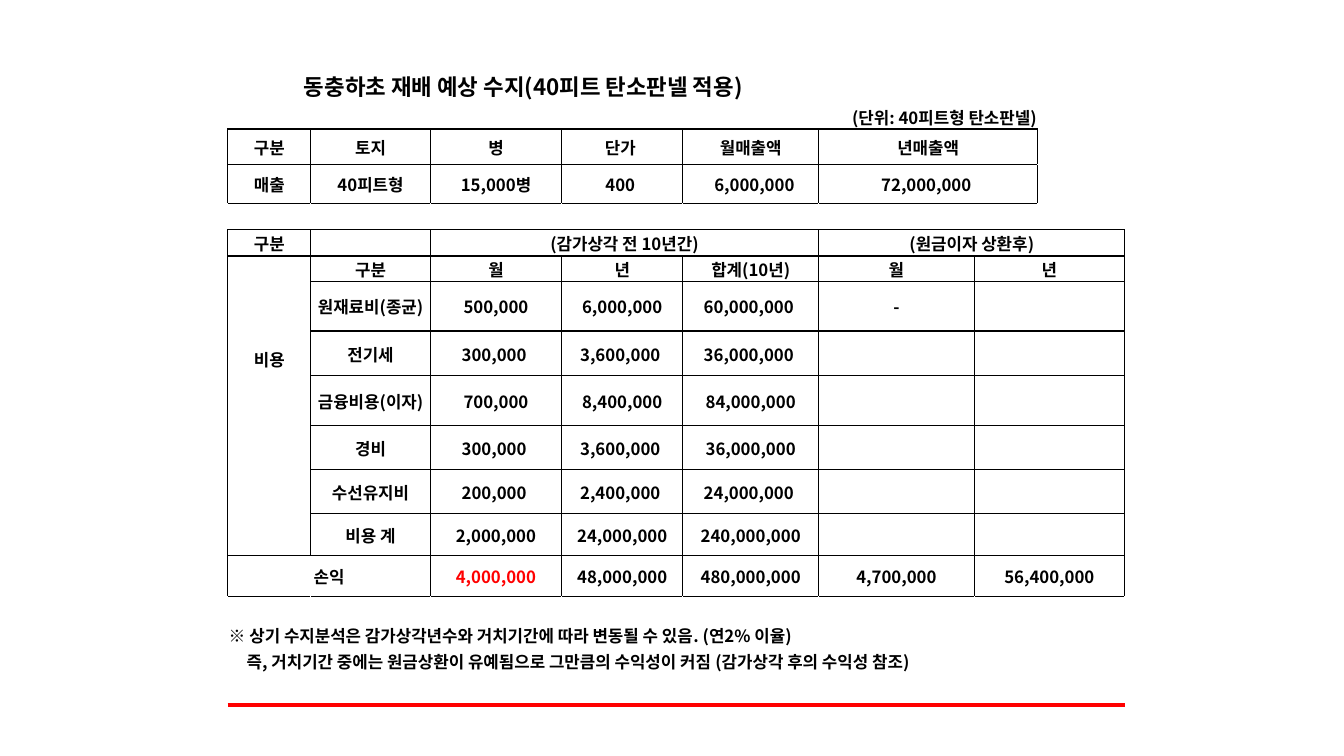
from dataclasses import dataclass

from lxml import etree
from pptx import Presentation
from pptx import util as u
from pptx.dml.color import RGBColor
from pptx.enum import shapes, text
from pptx.oxml.ns import qn
from pptx.table import Table, _Cell

BLACK = RGBColor(0x00, 0x00, 0x00)
WHITE = RGBColor(0xFF, 0xFF, 0xFF)
RED = RGBColor(0xFF, 0x00, 0x00)
FONT = "Noto Sans CJK KR"
BODY_SIZE = 12
LEFT, TOP, RIGHT, RULE_Y = 162.7, 49, 803.5, 503.3
COLUMN_WIDTHS = (59.3, 85.4, 93.9, 86.4, 97.2, 111, 45.4, 62.2)
COLUMN_COUNT = len(COLUMN_WIDTHS)


@dataclass(frozen=True)
class BudgetRow:
    height: float
    texts: tuple[str, ...] = ()
    boxed_columns: int = 0


@dataclass(frozen=True)
class Merge:
    row: int
    column: int
    rows: int
    columns: int


@dataclass(frozen=True)
class CellStyle:
    size: float = BODY_SIZE
    color: RGBColor = BLACK
    align: text.PP_ALIGN = text.PP_ALIGN.CENTER
    anchor: text.MSO_ANCHOR = text.MSO_ANCHOR.MIDDLE
    margin_left: float = 0.7
    margin_bottom: float = 0


ROWS = (
    BudgetRow(23.8, ("동충하초 재배 예상 수지(40피트 탄소판넬 적용)",)),
    BudgetRow(19.4, ("", "", "", "", "(단위: 40피트형 탄소판넬)")),
    BudgetRow(25.2, ("구분", "토지", "병", "단가 ", "월매출액", "년매출액"), 7),
    BudgetRow(28.1, ("매출", "40피트형", "15,000병", "400 ", "6,000,000", "72,000,000 "), 7),
    BudgetRow(18.7),
    BudgetRow(18.7, ("구분", "", "(감가상각 전 10년간)", "", "", "(원금이자 상환후)"), 8),
    BudgetRow(18, ("비용", "구분", "월", "년", "합계(10년)", "월", "년"), 8),
    BudgetRow(31.7, ("", "원재료비(종균)", "500,000", "6,000,000", "60,000,000 ", "-"), 8),
    BudgetRow(31.7, ("", "전기세", "300,000 ", "3,600,000 ", "36,000,000 "), 8),
    BudgetRow(31.7, ("", "금융비용(이자)", "700,000", "8,400,000", "84,000,000"), 8),
    BudgetRow(31.7, ("", "경비", "300,000 ", "3,600,000 ", "36,000,000"), 8),
    BudgetRow(31.7, ("", "수선유지비", "200,000 ", "2,400,000 ", "24,000,000 "), 8),
    BudgetRow(29.5, ("", "비용 계", "2,000,000", "24,000,000", "240,000,000"), 8),
    BudgetRow(29.5, ("손익", "", "4,000,000", "48,000,000", "480,000,000",
                     "4,700,000", "56,400,000"), 8),
    BudgetRow(15.8),
    BudgetRow(18, ("※ 상기 수지분석은 감가상각년수와 거치기간에 따라 변동될 수 있음. (연2% 이율)",)),
    BudgetRow(18.7, ("즉, 거치기간 중에는 원금상환이 유예됨으로 그만큼의 수익성이 커짐 "
                     "(감가상각 후의 수익성 참조)",)),
)

MERGES = (
    Merge(0, 0, 1, 5), Merge(0, 5, 1, 2), Merge(1, 4, 1, 3),
    *(Merge(row, 5, 1, 2) for row in (2, 3, 4)),
    Merge(5, 2, 1, 3), Merge(5, 5, 1, 3), Merge(6, 0, 7, 1), Merge(13, 0, 1, 2),
    *(Merge(row, 6, 1, 2) for row in range(6, 15)),
    *(Merge(row, 0, 1, COLUMN_COUNT) for row in (15, 16)),
)

DEFAULT_STYLE = CellStyle()
STYLES = {
    (0, 0): CellStyle(size=16, anchor=text.MSO_ANCHOR.BOTTOM),
    (1, 4): CellStyle(align=text.PP_ALIGN.RIGHT, anchor=text.MSO_ANCHOR.BOTTOM),
    (3, 4): CellStyle(margin_left=6),
    (6, 0): CellStyle(margin_bottom=67),
    (13, 2): CellStyle(color=RED),
    (15, 0): CellStyle(align=text.PP_ALIGN.LEFT),
    (16, 0): CellStyle(align=text.PP_ALIGN.LEFT, margin_left=13.5),
}


def is_boxed(row: int, column: int) -> bool:
    return 0 <= row < len(ROWS) and 0 <= column < ROWS[row].boxed_columns


def set_borders(cell: _Cell, row: int, column: int) -> None:
    """Draw a side black when the cell on either side of it is boxed."""
    properties = cell._tc.get_or_add_tcPr()
    neighbours = {"lnL": (row, column - 1), "lnR": (row, column + 1),
                  "lnT": (row - 1, column), "lnB": (row + 1, column)}
    for side, neighbour in neighbours.items():
        color = BLACK if is_boxed(row, column) or is_boxed(*neighbour) else WHITE
        line = etree.SubElement(properties, qn(f"a:{side}"), w=str(u.Pt(1)))
        fill = etree.SubElement(line, qn("a:solidFill"))
        etree.SubElement(fill, qn("a:srgbClr"), val=str(color))


def fill_cell(cell: _Cell, content: str, style: CellStyle) -> None:
    cell.fill.background()
    cell.vertical_anchor = style.anchor
    cell.margin_left = u.Pt(style.margin_left)
    cell.margin_right = cell.margin_top = u.Pt(0.7)
    cell.margin_bottom = u.Pt(style.margin_bottom)
    paragraph = cell.text_frame.paragraphs[0]
    paragraph.alignment = style.align
    if content:
        run = paragraph.add_run()
        run.text = content
        run.font.name = FONT
        run.font.size = u.Pt(style.size)
        run.font.bold = True
        run.font.color.rgb = style.color
        etree.SubElement(run._r.get_or_add_rPr(), qn("a:ea"), typeface=FONT)
    else:
        # The end mark keeps an empty cell from growing its row.
        end_mark = etree.SubElement(paragraph._p, qn("a:endParaRPr"), sz=str(BODY_SIZE * 100))
        for script in ("latin", "ea"):
            etree.SubElement(end_mark, qn(f"a:{script}"), typeface=FONT)


def fill_table(table: Table) -> None:
    table.first_row = table.horz_banding = False
    for column, width in zip(table.columns, COLUMN_WIDTHS):
        column.width = u.Pt(width)
    for row_index, row in enumerate(ROWS):
        table.rows[row_index].height = u.Pt(row.height)
        for column_index in range(COLUMN_COUNT):
            cell = table.cell(row_index, column_index)
            content = row.texts[column_index] if column_index < len(row.texts) else ""
            set_borders(cell, row_index, column_index)
            fill_cell(cell, content, STYLES.get((row_index, column_index), DEFAULT_STYLE))
    for merge in MERGES:
        last = table.cell(merge.row + merge.rows - 1, merge.column + merge.columns - 1)
        table.cell(merge.row, merge.column).merge(last)


def main() -> None:
    presentation = Presentation()
    presentation.slide_width = u.Pt(960)
    presentation.slide_height = u.Pt(540)
    slide = presentation.slides.add_slide(presentation.slide_layouts[6])

    rule = slide.shapes.add_connector(
        shapes.MSO_CONNECTOR.STRAIGHT, u.Pt(LEFT), u.Pt(RULE_Y), u.Pt(RIGHT), u.Pt(RULE_Y))
    rule.line.color.rgb = RED
    rule.line.width = u.Pt(3)
    etree.SubElement(rule._element.spPr, qn("a:effectLst"))

    frame = slide.shapes.add_table(
        len(ROWS), COLUMN_COUNT, u.Pt(LEFT), u.Pt(TOP),
        u.Pt(sum(COLUMN_WIDTHS)), u.Pt(sum(row.height for row in ROWS)))
    fill_table(frame.table)
    presentation.save("out.pptx")


if __name__ == "__main__":
    main()
